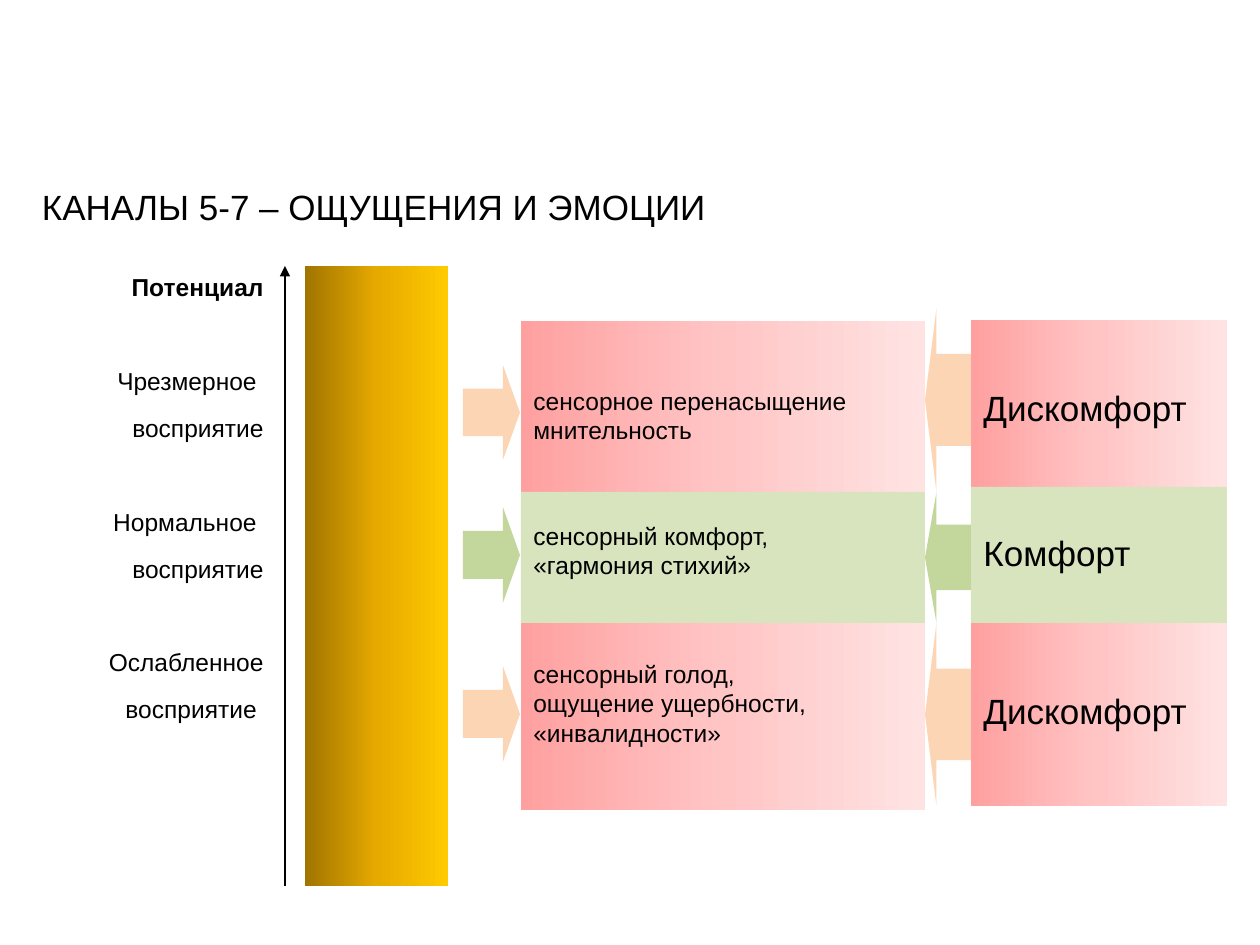
import copy

import pptx
import pptx.dml.color
import pptx.enum.shapes
import pptx.enum.text
import pptx.oxml
import pptx.oxml.ns
import pptx.util

SHAPE = pptx.enum.shapes.MSO_SHAPE
ALIGN = pptx.enum.text.PP_ALIGN
ANCHOR = pptx.enum.text.MSO_ANCHOR
COLORS = {
    "text": "000000",
    "green": "D7E4BD",
    "green_arrow": "C3D69B",
    "peach_arrow": "FCD5B5",
}
GRADIENTS = {
    "gold": ["A07400", "E6A900", "FFCA00"],
    "pink": ["FFA0A0", "FFC5C5", "FFE3E3"],
}


def px(n):
    return pptx.util.Emu(round(n * 914400 / 126))


def rgb(name):
    return pptx.dml.color.RGBColor.from_string(COLORS[name])


class Deck:
    font = "Arial"

    def __init__(self, width, height):
        self.prs = pptx.Presentation()
        self.prs.slide_width, self.prs.slide_height = px(width), px(height)
        self.s = self.prs.slides.add_slide(self.prs.slide_layouts[6])

    def set_lines(self, tf, lines, size, align=ALIGN.LEFT):
        tf.word_wrap = True
        for i, line in enumerate(lines):
            p = tf.paragraphs[0] if i == 0 else tf.add_paragraph()
            p.text = line
            p.alignment = align
            p.font.name = self.font
            p.font.size = pptx.util.Pt(size)
            p.font.color.rgb = rgb("text")
        return tf.paragraphs

    def text(self, box, lines, size, align, anchor=ANCHOR.TOP):
        tf = self.s.shapes.add_textbox(*map(px, box)).text_frame
        tf.vertical_anchor = anchor
        return self.set_lines(tf, lines, size, align)

    def gradient(self, fill, colors):
        """Fill left to right with evenly spaced colour stops."""
        fill.gradient()
        fill.gradient_angle = 0
        stops = fill._fill._gradFill.gsLst
        for _ in range(len(colors) - len(stops)):
            stops.append(copy.deepcopy(stops[0]))
        for i, (stop, color) in enumerate(zip(fill.gradient_stops, colors)):
            stop.position = i / (len(colors) - 1)
            stop.color.rgb = pptx.dml.color.RGBColor.from_string(color)

    def shape(self, kind, box, color):
        sp = self.s.shapes.add_shape(kind, *map(px, box))
        sp.shadow.inherit = False
        sp.line.fill.background()
        if color in GRADIENTS:
            self.gradient(sp.fill, GRADIENTS[color])
        else:
            sp.fill.solid()
            sp.fill.fore_color.rgb = rgb(color)
        return sp

    def panel(self, box, color, lines, size, top):
        tf = self.shape(SHAPE.RECTANGLE, box, color).text_frame
        tf.vertical_anchor = ANCHOR.TOP
        tf.margin_top = px(top)
        self.set_lines(tf, lines, size)

    def arrow(self, kind, box, color, head):
        sp = self.shape(kind, box, color)
        sp.adjustments[0], sp.adjustments[1] = 0.5, head

    def axis(self, x, bottom, top):
        line = self.s.shapes.add_connector(
            pptx.enum.shapes.MSO_CONNECTOR.STRAIGHT, px(x), px(bottom), px(x), px(top))
        line.line.width = pptx.util.Pt(1.5)
        line.line.color.rgb = rgb("text")
        ns = pptx.oxml.ns.nsdecls("a")
        line.line._get_or_add_ln().append(
            pptx.oxml.parse_xml(f'<a:tailEnd {ns} type="triangle"/>'))
        line._element.spPr.append(pptx.oxml.parse_xml(f"<a:effectLst {ns}/>"))


def main():
    deck = Deck(1260, 945)
    deck.text((8, 185, 732, 42), ["КАНАЛЫ 5-7 – ОЩУЩЕНИЯ И ЭМОЦИИ"], 20,
              ALIGN.CENTER, ANCHOR.MIDDLE)

    levels = deck.text(
        (29, 266, 247, 620),
        ["Потенциал", "Чрезмерное ", "восприятие", "Нормальное ", "восприятие",
         "Ослабленное", "восприятие "], 14, ALIGN.RIGHT)
    levels[0].font.bold = True
    for i, p in enumerate(levels):
        # a wider gap follows the heading and each two-line label
        p.space_after = pptx.util.Pt(10 if i % 2 else 36.8)

    deck.shape(SHAPE.RECTANGLE, (305, 266, 143, 620), "gold")
    deck.axis(285, 886, 266)

    # Per row: fill, arrow colour, then (top, height) of the right arrow, the
    # feeling panel, the left arrow and the state panel, with text and inset.
    rows = [
        ("pink", "peach_arrow", (365, 95), (321, 171), (308, 184), (320, 168),
         ["сенсорное перенасыщение", "мнительность"], 65, "Дискомфорт", 66),
        ("green", "green_arrow", (507, 96), (492, 131), (492, 131), (487, 136),
         ["сенсорный комфорт,", "«гармония стихий»"], 29, "Комфорт", 45),
        ("pink", "peach_arrow", (666, 96), (623, 187), (623, 183), (623, 183),
         ["сенсорный голод,", "ощущение ущербности,", "«инвалидности»"], 36,
         "Дискомфорт", 66),
    ]
    for (fill, arrow, inward, feeling, back, state,
         feeling_lines, feeling_top, state_name, state_top) in rows:
        deck.panel((521, feeling[0], 404, feeling[1]), fill, feeling_lines, 14, feeling_top)
        deck.panel((971, state[0], 256, state[1]), fill, [state_name], 20, state_top)
        deck.arrow(SHAPE.RIGHT_ARROW, (463, inward[0], 57, inward[1]), arrow, 0.3)
        deck.arrow(SHAPE.LEFT_ARROW, (925, back[0], 46, back[1]), arrow, 0.25)

    deck.prs.save("out.pptx")


if __name__ == "__main__":
    main()
